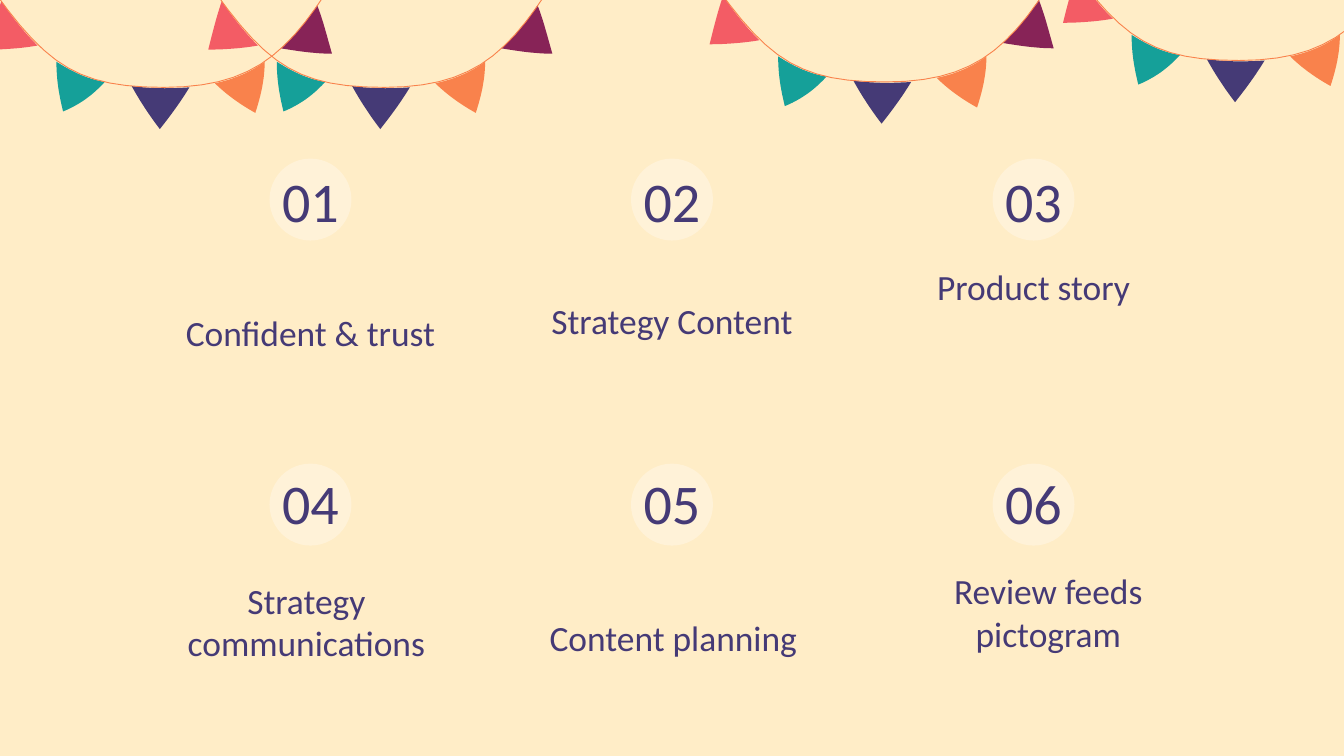
"""Build an agenda slide with six numbered topics under bunting."""
from lxml import etree
from pptx import Presentation
from pptx import util as u
from pptx.dml.color import RGBColor
from pptx.enum import shapes, text
from pptx.oxml.ns import qn

CREAM = RGBColor(0xFF, 0xED, 0xC7)
WHITE = RGBColor(0xFF, 0xFF, 0xFF)
INDIGO = RGBColor(0x45, 0x3A, 0x76)
MAROON = RGBColor(0x87, 0x23, 0x57)
ORANGE = RGBColor(0xF9, 0x82, 0x4C)
TEAL = RGBColor(0x15, 0xA0, 0x99)
PINK = RGBColor(0xF3, 0x5C, 0x65)

FONT = "Calibri"
SLIDE_WIDTH = 10
CURVE_STEPS = 12
CIRCLE_SIZE = 0.61
NUMBER_WIDTH, LABEL_WIDTH, TEXT_HEIGHT = 1.36, 2.47, 0.53
CENTRE, COLUMN_PITCH = 5, 2.69

GARLANDS = [(-0.04, -0.06), (1.6, -0.06), (5.33, -0.1), (7.96, -0.26)]
CORD = [(2.47, 0), (2.15, 0.49), (1.88, 0.71), (1.26, 0.71),
        (0.64, 0.71), (0.4, 0.56), (0, 0)]
FLAGS = [
    (MAROON, [(2.4, 0.1), (2.32, 0.22), (2.24, 0.32), (2.13, 0.42),
              (2.25, 0.44), (2.38, 0.46), (2.51, 0.46),
              (2.47, 0.32), (2.44, 0.2), (2.4, 0.1)]),
    (ORANGE, [(2.01, 0.52), (1.9, 0.6), (1.78, 0.65), (1.64, 0.68),
              (1.72, 0.76), (1.83, 0.84), (1.94, 0.9),
              (1.98, 0.78), (2.01, 0.65), (2.01, 0.52)]),
    (INDIGO, [(1.02, 0.7), (1.08, 0.81), (1.16, 0.93), (1.23, 1.02),
              (1.31, 0.92), (1.39, 0.81), (1.45, 0.71),
              (1.3, 0.72), (1.16, 0.72), (1.02, 0.7)]),
    (TEAL, [(0.46, 0.52), (0.46, 0.65), (0.48, 0.77), (0.51, 0.89),
            (0.63, 0.84), (0.73, 0.77), (0.82, 0.67),
            (0.69, 0.65), (0.57, 0.59), (0.46, 0.52)]),
    (PINK, [(0.05, 0.07), (0.01, 0.19), (-0.02, 0.31), (-0.05, 0.43),
            (0.07, 0.43), (0.2, 0.42), (0.32, 0.4),
            (0.22, 0.3), (0.14, 0.2), (0.05, 0.07)]),
]

ROWS = [
    (1.18, 0.13, [("Confident & trust", 0, 1.02),
                  ("Strategy Content", 0, 0.93),
                  ("Product story", 0, 0.68)]),
    (3.45, 0.11, [("Strategy communications", -0.03, 1.06),
                  ("Content planning", 0.01, 1.02),
                  ("Review feeds pictogram", 0.11, 0.99)]),
]


def curve_points(controls):
    """Return points along a chain of cubic Bezier curves."""
    points = [controls[0]]
    for start in range(0, len(controls) - 1, 3):
        a, b, c, d = controls[start:start + 4]
        for step in range(1, CURVE_STEPS + 1):
            t = step / CURVE_STEPS
            weights = ((1 - t) ** 3, 3 * t * (1 - t) ** 2, 3 * t * t * (1 - t), t ** 3)
            points.append(tuple(
                sum(weight * point[axis] for weight, point in zip(weights, (a, b, c, d)))
                for axis in (0, 1)))
    return points


def add_curve(group, left, top, controls, close):
    """Draw a curved outline relative to a corner."""
    points = [(u.Inches(left + x), u.Inches(top + y)) for x, y in curve_points(controls)]
    builder = group.shapes.build_freeform(*points[0], scale=1.0)
    builder.add_line_segments(points[1:], close=close)
    shape = builder.convert_to_shape()
    shape.shadow.inherit = False
    return shape


def add_garland(slide, left, top, flags):
    """Hang a cord with its flags from the given corner."""
    group = slide.shapes.add_group_shape()
    for color, controls in flags:
        flag = add_curve(group, left, top, controls, True)
        flag.fill.solid()
        flag.fill.fore_color.rgb = color
        flag.line.fill.background()
    cord = add_curve(group, left, top, CORD, False)
    cord.fill.background()
    cord.line.color.rgb = ORANGE
    cord.line.width = u.Pt(0.48)


def add_circle(slide, left, top):
    """Add a translucent white disc."""
    circle = slide.shapes.add_shape(
        shapes.MSO_SHAPE.OVAL, u.Inches(left), u.Inches(top),
        u.Inches(CIRCLE_SIZE), u.Inches(CIRCLE_SIZE))
    circle.shadow.inherit = False
    circle.fill.solid()
    circle.fill.fore_color.rgb = WHITE
    circle.line.fill.background()
    color = circle.element.spPr.find(qn("a:solidFill"))[0]
    etree.SubElement(color, qn("a:alpha")).set("val", "31000")


def set_text(shape, left, top, width, words, size):
    """Place a text shape and fill it with one centred run."""
    shape.left, shape.top = u.Inches(left), u.Inches(top)
    shape.width, shape.height = u.Inches(width), u.Inches(TEXT_HEIGHT)
    frame = shape.text_frame
    frame.word_wrap = True
    frame.auto_size = text.MSO_AUTO_SIZE.NONE
    frame.vertical_anchor = text.MSO_ANCHOR.BOTTOM
    frame.margin_left = frame.margin_right = u.Inches(0.1)
    frame.margin_top = frame.margin_bottom = u.Inches(0.1)
    paragraph = frame.paragraphs[0]
    paragraph.alignment = text.PP_ALIGN.CENTER
    run = paragraph.add_run()
    run.text = words
    run.font.size = u.Pt(size)
    run.font.name = FONT
    run.font.color.rgb = INDIGO


def add_topic(slide, centre, top, number, number_drop, label, shift, label_drop):
    """Add a disc, number and label around a column centre."""
    add_circle(slide, centre - CIRCLE_SIZE / 2, top)
    if number == 1:
        number_shape = slide.shapes.title
        slide.shapes.element.append(number_shape.element)
    else:
        number_shape = slide.shapes.add_textbox(0, 0, 0, 0)
    set_text(number_shape, centre - NUMBER_WIDTH / 2, top + number_drop,
             NUMBER_WIDTH, f"{number:02}", 30)
    set_text(slide.shapes.add_textbox(0, 0, 0, 0), centre - LABEL_WIDTH / 2 + shift,
             top + label_drop, LABEL_WIDTH, label, 19)


def main():
    """Build and save the presentation."""
    presentation = Presentation()
    presentation.slide_width = u.Inches(SLIDE_WIDTH)
    presentation.slide_height = u.Inches(SLIDE_WIDTH * 9 / 16)
    slide = presentation.slides.add_slide(presentation.slide_layouts.get_by_name("Title Only"))
    slide.background.fill.solid()
    slide.background.fill.fore_color.rgb = CREAM
    for left, top in GARLANDS:
        visible = [flag for flag in FLAGS if left + flag[1][0][0] < SLIDE_WIDTH]
        add_garland(slide, left, top, visible)
    for row, (top, number_drop, topics) in enumerate(ROWS):
        for column, topic in enumerate(topics):
            centre = CENTRE + (column - 1) * COLUMN_PITCH
            add_topic(slide, centre, top, row * 3 + column + 1, number_drop, *topic)
    presentation.save("out.pptx")


if __name__ == "__main__":
    main()
